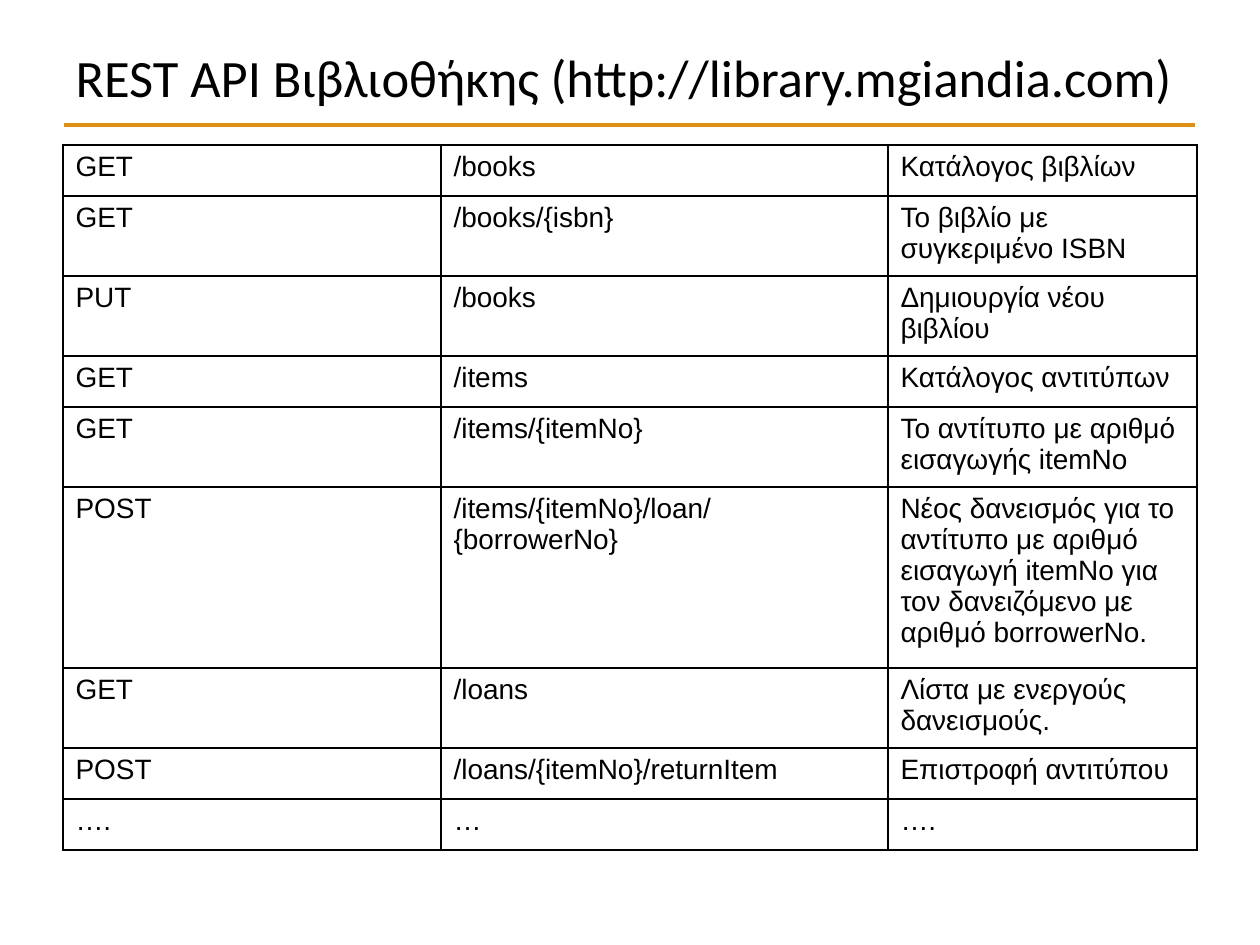
import lxml.etree
import pptx
import pptx.dml.color
import pptx.enum.shapes
import pptx.enum.text
import pptx.oxml.ns
import pptx.util

EMU_PER_PX = 914400 / 126
COLORS = {"text": "000000", "rule": "DC9016", "border": "000000"}
TITLE_FONT = {"name": "Calibri", "size": pptx.util.Pt(30), "bold": False}
CELL_FONT = {"name": "Arial", "size": pptx.util.Pt(16), "bold": False}
TITLE_FRAME = {
    "word_wrap": True,
    "auto_size": pptx.enum.text.MSO_AUTO_SIZE.NONE,
    "vertical_anchor": pptx.enum.text.MSO_ANCHOR.MIDDLE,
}
COLUMN_WIDTHS = [378, 447, 309]
ROW_HEIGHTS = [51, 80, 80, 51, 80, 181, 80, 51, 51]
ENDPOINTS = [
    ("GET", "/books", "Κατάλογος βιβλίων"),
    ("GET", "/books/{isbn}", "Το βιβλίο με συγκεριμένο ISBN"),
    ("PUT", "/books", "Δημιουργία νέου βιβλίου"),
    ("GET", "/items", "Κατάλογος αντιτύπων"),
    ("GET", "/items/{itemNo}", "Το αντίτυπο με αριθμό εισαγωγής itemNo"),
    ("POST", "/items/{itemNo}/loan/{borrowerNo}",
     "Νέος δανεισμός για το αντίτυπο με αριθμό εισαγωγή itemNo "
     "για τον δανειζόμενο με αριθμό borrowerNo."),
    ("GET", "/loans", "Λίστα με ενεργούς δανεισμούς."),
    ("POST", "/loans/{itemNo}/returnItem", "Επιστροφή αντιτύπου"),
    ("….", "…", "…."),
]


def px(value):
    return pptx.util.Emu(round(value * EMU_PER_PX))


def write(para, text, font_format):
    span = para.add_run()
    span.text = text
    for name, value in font_format.items():
        setattr(span.font, name, value)
    span.font.color.rgb = pptx.dml.color.RGBColor.from_string(COLORS["text"])


deck = pptx.Presentation()
deck.slide_width = px(1260)
deck.slide_height = px(945)
page = deck.slides.add_slide(deck.slide_layouts[5])

rule = page.shapes.add_connector(
    pptx.enum.shapes.MSO_CONNECTOR.STRAIGHT, px(64), px(125), px(1195), px(125))
rule.line.color.rgb = pptx.dml.color.RGBColor.from_string(COLORS["rule"])
rule.line.width = pptx.util.Pt(2.5)
lxml.etree.SubElement(rule._element.spPr, pptx.oxml.ns.qn("a:effectLst"))

title = page.shapes.title
title_place = {"left": 63, "top": 38, "width": 1134, "height": 77}
for name, value in title_place.items():
    setattr(title, name, px(value))
for name, value in TITLE_FRAME.items():
    setattr(title.text_frame, name, value)
title_para = title.text_frame.paragraphs[0]
title_para.alignment = pptx.enum.text.PP_ALIGN.LEFT
write(title_para, "REST API Βιβλιοθήκης (http://library.mgiandia.com)", TITLE_FONT)

table = page.shapes.add_table(
    len(ENDPOINTS), len(COLUMN_WIDTHS), px(63), px(145),
    px(sum(COLUMN_WIDTHS)), px(sum(ROW_HEIGHTS))).table
table.first_row = False
table.horz_banding = False
for column, width in zip(table.columns, COLUMN_WIDTHS):
    column.width = px(width)

for row, height, endpoint in zip(table.rows, ROW_HEIGHTS, ENDPOINTS):
    row.height = px(height)
    for cell, text in zip(row.cells, endpoint):
        write(cell.text_frame.paragraphs[0], text, CELL_FONT)
        cell.fill.background()
        properties = cell._tc.get_or_add_tcPr()
        for position, side in enumerate(["lnL", "lnR", "lnT", "lnB"]):
            border = lxml.etree.Element(
                pptx.oxml.ns.qn("a:" + side), w=str(pptx.util.Pt(1)))
            fill = lxml.etree.SubElement(border, pptx.oxml.ns.qn("a:solidFill"))
            lxml.etree.SubElement(
                fill, pptx.oxml.ns.qn("a:srgbClr"), val=COLORS["border"])
            properties.insert(position, border)

deck.save("out.pptx")
